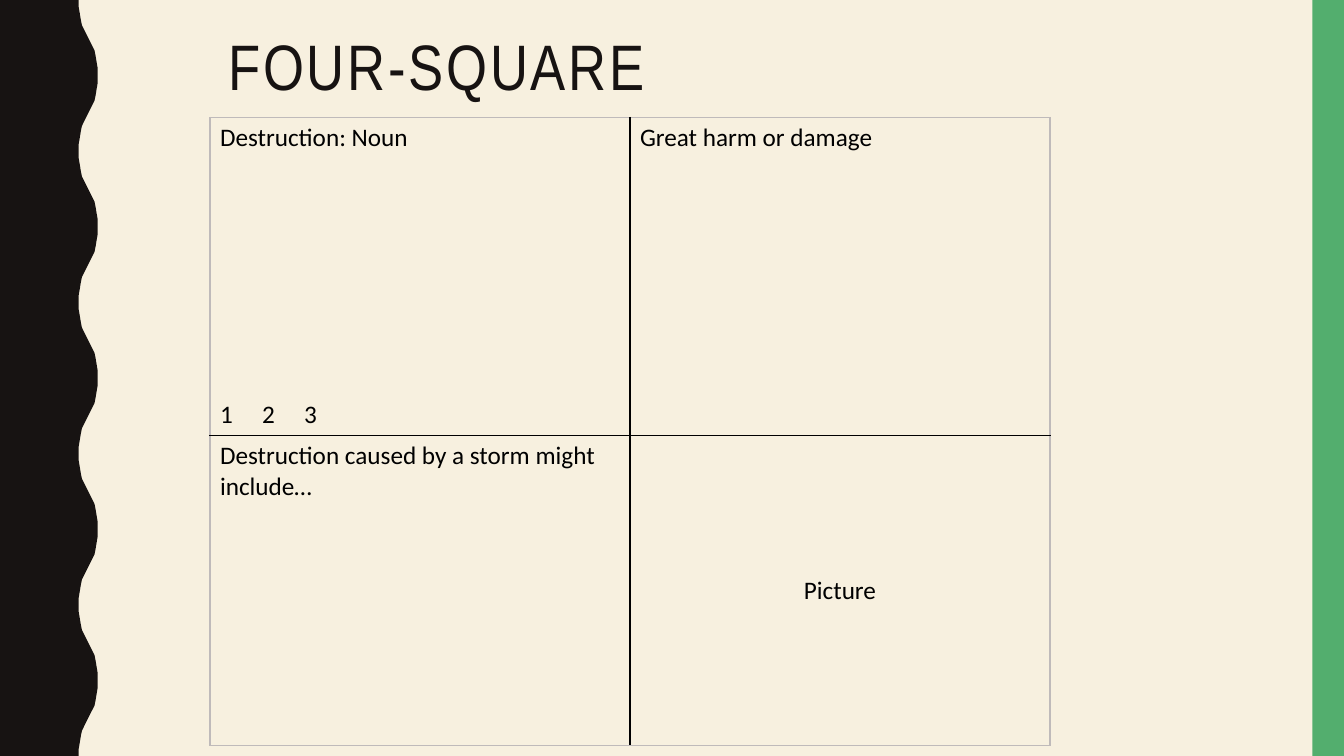
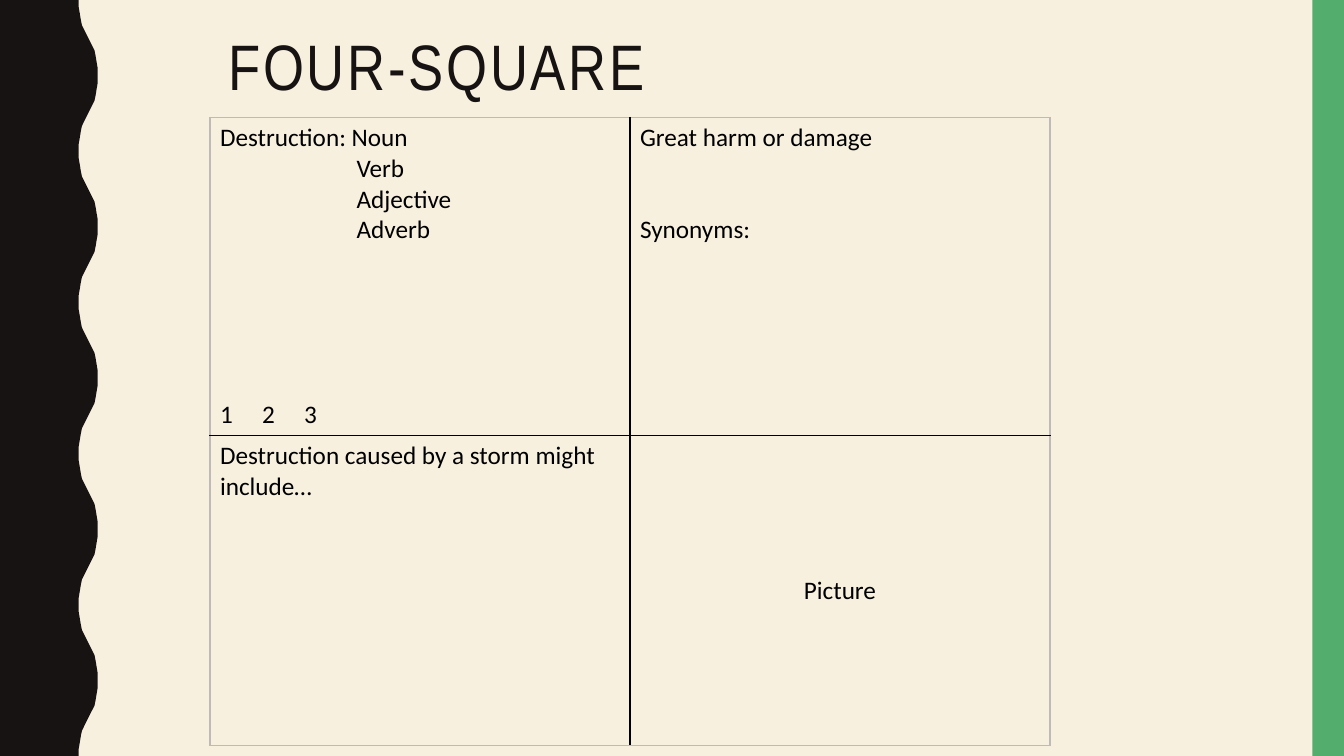
"""Build two four-square vocabulary slides."""
import lxml.etree
import pptx
import pptx.dml.color
import pptx.enum.shapes
import pptx.enum.text
import pptx.oxml.ns
import pptx.util

EMU_PER_PX = 9525
SLIDE_WIDTH, SLIDE_HEIGHT = 1280, 720
COLORS = {
    "background": "F7F0DF",
    "dark": "171312",
    "green": "53AE6E",
    "text": "000000",
    "inner": "000000",
    "outer": "BFBABA",
}
TITLE = "FOUR-SQUARE"
TITLE_BOX = (208, 29, 800, 75)
GREEN_BAND = (1250, 0, 30, SLIDE_HEIGHT)
TABLE_LEFT, TABLE_TOP = 200, 112
COLUMN_WIDTHS = (400, 400)
ROW_HEIGHTS = (303, 295)

WAVE_COUNT, WAVE_HEIGHT = 5, 144
HALF_WAVE = [(75, 0), (75, 7), (76, 13), (77, 19), (78, 24), (80, 28), (82, 32), (84, 36),
             (86, 40), (88, 44), (90, 48), (91, 53), (92, 59), (93, 65), (93, 72)]

LINE_POINTS = 22
WORD_INDENT = 130
NUMBER_TABS = (40, 80)
CENTER = pptx.enum.text.PP_ALIGN.CENTER
MIDDLE = pptx.enum.text.MSO_ANCHOR.MIDDLE

BOTTOM_ROW = [
    [("Destruction caused by a storm might include…", {})],
    [("Picture", {"align": CENTER})],
]


def number_line(blank_lines):
    """Return the syllable numbers, set below a gap of some lines."""
    return "1\t2\t3", {"space_before": blank_lines * LINE_POINTS, "tabs": NUMBER_TABS}


SLIDES = [
    [
        [[("Destruction: Noun", {}), number_line(8)], [("Great harm or damage", {})]],
        BOTTOM_ROW,
    ],
    [
        [
            [("Destruction: Noun", {})]
            + [(word, {"indent": WORD_INDENT}) for word in ("Verb", "Adjective", "Adverb")]
            + [number_line(5)],
            [("Great harm or damage", {}), ("Synonyms:", {"space_before": 2 * LINE_POINTS})],
        ],
        BOTTOM_ROW,
    ],
]


def px(*lengths):
    """Turn pixel lengths into EMU."""
    return [pptx.util.Emu(length * EMU_PER_PX) for length in lengths]


def rgb(name):
    """Look up a named colour."""
    return pptx.dml.color.RGBColor.from_string(COLORS[name])


def add_element(parent, tag, **attributes):
    """Append an XML element with the given attributes."""
    element = lxml.etree.SubElement(parent, pptx.oxml.ns.qn(tag))
    for name, value in attributes.items():
        element.set(name, str(value))
    return element


def write_text(paragraph, text, font="Calibri", size=18, color="text", align=None,
               space_before=0, line_spacing=None, spacing=0, indent=0, tabs=()):
    """Write one formatted paragraph."""
    run = paragraph.add_run()
    run.text = text
    run.font.name = font
    run.font.size = pptx.util.Pt(size)
    run.font.color.rgb = rgb(color)
    paragraph.alignment = align
    paragraph.space_before = pptx.util.Pt(space_before)
    paragraph.line_spacing = line_spacing
    if spacing:
        run.font._element.set("spc", str(spacing * 100))
    properties = paragraph._p.get_or_add_pPr()
    if indent:
        properties.set("marL", str(px(indent)[0]))
    if tabs:
        tab_list = add_element(properties, "a:tabLst")
        for position in px(*tabs):
            add_element(tab_list, "a:tab", pos=position, algn="l")


def paint(shape, color):
    """Give a shape a flat fill with no line or shadow."""
    shape.shadow.inherit = False
    shape.fill.solid()
    shape.fill.fore_color.rgb = rgb(color)
    shape.line.fill.background()


def add_wave(slide):
    """Draw the dark wavy band on the left."""
    wave = HALF_WAVE + [(x, WAVE_HEIGHT - y) for x, y in reversed(HALF_WAVE[:-1])]
    edge = [(x, y + index * WAVE_HEIGHT) for index in range(WAVE_COUNT) for x, y in wave]
    builder = slide.shapes.build_freeform(0, 0, scale=EMU_PER_PX)
    builder.add_line_segments(edge + [(0, SLIDE_HEIGHT)], close=True)
    paint(builder.convert_to_shape(), "dark")


def add_frame(slide):
    """Add the bands and the title that every slide shares."""
    add_wave(slide)
    rectangle = pptx.enum.shapes.MSO_SHAPE.RECTANGLE
    paint(slide.shapes.add_shape(rectangle, *px(*GREEN_BAND)), "green")
    text_frame = slide.shapes.add_textbox(*px(*TITLE_BOX)).text_frame
    text_frame.word_wrap = True
    text_frame.vertical_anchor = MIDDLE
    write_text(text_frame.paragraphs[0], TITLE, font="Arial Narrow", size=45.9,
               color="dark", line_spacing=0.9, spacing=2)


def set_borders(cell, sides):
    """Draw the four borders of a cell, each in a named colour."""
    properties = cell._tc.get_or_add_tcPr()
    for tag, color in sides.items():
        line = add_element(properties, tag, w=pptx.util.Pt(1))
        add_element(add_element(line, "a:solidFill"), "a:srgbClr", val=COLORS[color])


def add_four_square(slide, rows):
    """Add the two-by-two table."""
    table = slide.shapes.add_table(
        len(ROW_HEIGHTS), len(COLUMN_WIDTHS),
        *px(TABLE_LEFT, TABLE_TOP, sum(COLUMN_WIDTHS), sum(ROW_HEIGHTS))).table
    table.first_row = table.horz_banding = False
    for column, width in zip(table.columns, px(*COLUMN_WIDTHS)):
        column.width = width
    for row, height in zip(table.rows, px(*ROW_HEIGHTS)):
        row.height = height
    for row_index, row in enumerate(rows):
        for column_index, lines in enumerate(row):
            cell = table.cell(row_index, column_index)
            set_borders(cell, {
                "a:lnL": "inner" if column_index else "outer",
                "a:lnR": "outer" if column_index else "inner",
                "a:lnT": "inner" if row_index else "outer",
                "a:lnB": "outer" if row_index else "inner",
            })
            cell.fill.background()
            if row_index and column_index:
                cell.vertical_anchor = MIDDLE
            for index, (text, style) in enumerate(lines):
                text_frame = cell.text_frame
                paragraph = text_frame.add_paragraph() if index else text_frame.paragraphs[0]
                write_text(paragraph, text, **style)


def main():
    """Build and save the presentation."""
    presentation = pptx.Presentation()
    presentation.slide_width, presentation.slide_height = px(SLIDE_WIDTH, SLIDE_HEIGHT)
    background = presentation.slide_master.background.fill
    background.solid()
    background.fore_color.rgb = rgb("background")
    for rows in SLIDES:
        slide = presentation.slides.add_slide(presentation.slide_layouts[6])
        add_frame(slide)
        add_four_square(slide, rows)
    presentation.save("out.pptx")


if __name__ == "__main__":
    main()
